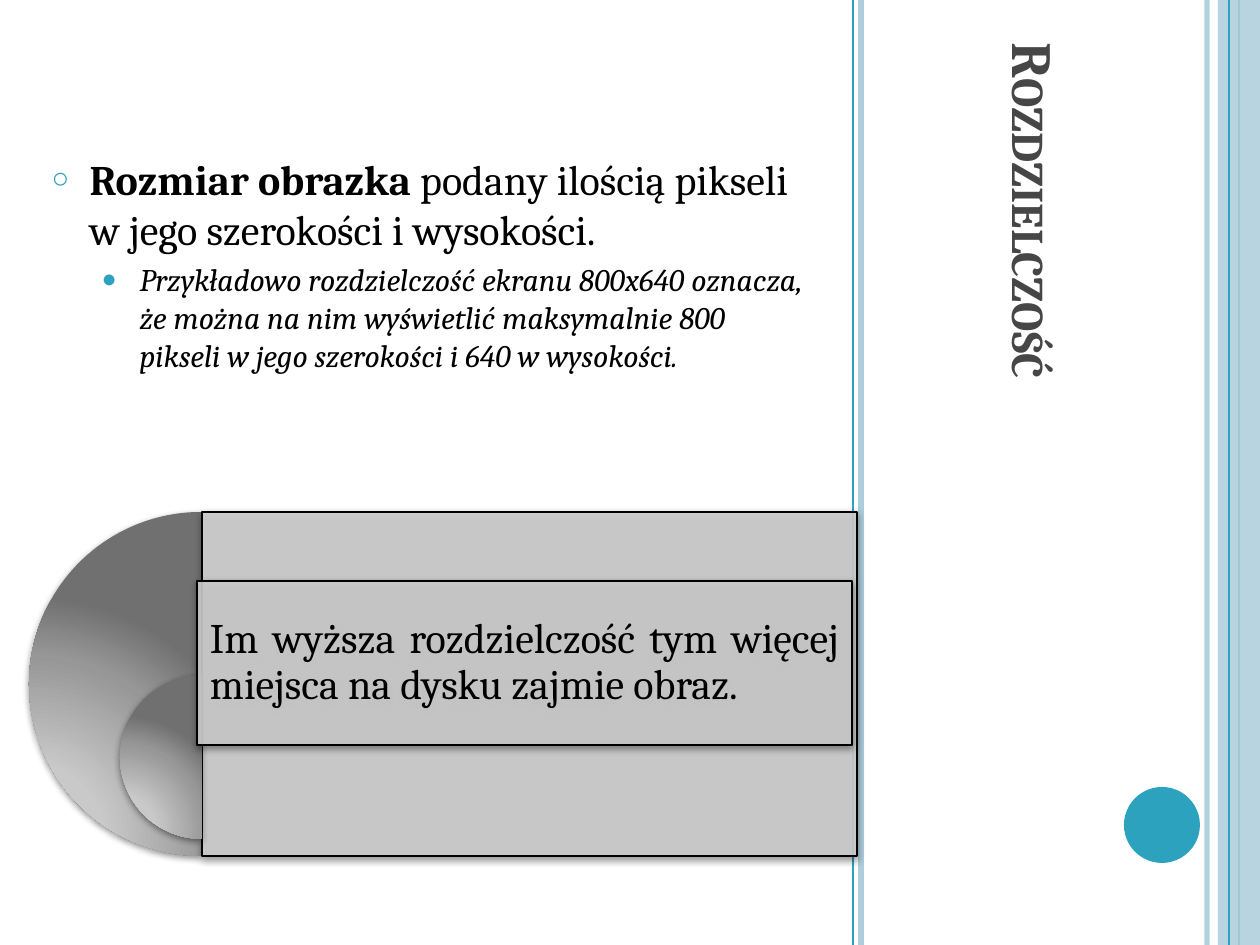
import pptx
import pptx.util
import pptx.dml.color
import pptx.enum.shapes
import pptx.enum.text
import pptx.oxml
import pptx.oxml.ns
from pptx.oxml.ns import qn

SCALE = 914400 // 126  # EMU per px
WIDTH, HEIGHT = 1260, 945
FONT = "Cambria"
ACCENT, PALE, GRAY, BLACK = "2DA2BF", "ADCEDC", "CCCCCC", "000000"

TITLE = "Rozdzielczość"
# level, bullet, bullet size %, left indent px, font size, runs (text, bold, italic)
BODY = [
    (0, "○", 70, 38, 24, [
        ("Rozmiar obrazka ", True, False),
        ("podany ilością pikseli w jego szerokości i wysokości.", False, False)]),
    (1, "●", 80, 88, 18, [
        ("Przykładowo rozdzielczość ekranu 800x640 oznacza, że można na nim "
         "wyświetlić maksymalnie 800 pikseli w jego szerokości i 640 w wysokości.",
         False, True)]),
]
NOTE = "Im wyższa rozdzielczość tym więcej miejsca na dysku zajmie obraz."

# x px, colour, width pt, opacity %
STRIPES = [(1207, PALE, 3, 93), (861, PALE, 3, 100), (853, ACCENT, 1, 100),
           (1239, ACCENT, 1.5, 100)]
INNER_STRIPE = (1229, ACCENT, 0.75, 100)
# half disc (left, top, diameter), panel (left, top, width, height), panel text
LAYERS = [((29, 512, 344), (202, 512, 655, 344), None),
          ((120, 675, 164), (197, 581, 655, 164), NOTE)]
GRADIENT = [(0, "D1D1D1"), (30, "C9C9C9"), (75, "979797"), (100, "707070")]


def px(value):
    return pptx.util.Emu(value * SCALE)


def color(text):
    return pptx.dml.color.RGBColor.from_string(text)


def add_xml(parent, xml):
    element = pptx.oxml.parse_xml(
        xml.replace(">", " " + pptx.oxml.ns.nsdecls("a") + ">", 1)
        if "/>" not in xml.split(">")[0] + ">"
        else xml.replace("/>", " " + pptx.oxml.ns.nsdecls("a") + "/>", 1))
    parent.append(element)
    return element


def set_opacity(element, percent):
    if percent < 100:
        add_xml(next(element.iter(qn("a:srgbClr"))), f'<a:alpha val="{percent * 1000}"/>')


def place(shape, left, top, width, height):
    shape.left, shape.top, shape.width, shape.height = map(px, (left, top, width, height))


def add_run(paragraph, text, size, tone, bold=False, italic=False):
    run = paragraph.add_run()
    run.text = text
    font = run.font
    font.name, font.size, font.bold, font.italic = FONT, pptx.util.Pt(size), bold, italic
    font.color.rgb = color(tone)
    return run


def add_stripe(shapes, x, tone, width, opacity):
    line = shapes.add_connector(pptx.enum.shapes.MSO_CONNECTOR.STRAIGHT,
                                px(x), 0, px(x), px(HEIGHT))
    line.line.color.rgb = color(tone)
    line.line.width = pptx.util.Pt(width)
    set_opacity(line.element.spPr, opacity)
    add_xml(line.element.spPr, "<a:effectLst/>")


def add_plain(shapes, kind, left, top, width, height, tone, opacity=100):
    shape = shapes.add_shape(kind, *map(px, (left, top, width, height)))
    shape.fill.solid()
    shape.fill.fore_color.rgb = color(tone)
    set_opacity(shape.element.spPr, opacity)
    shape.line.fill.background()
    shape.shadow.inherit = False
    return shape


def add_shadow(shape):
    effects = shape.element.spPr.find(qn("a:effectLst"))
    add_xml(effects, '<a:outerShdw blurRad="50800" dist="20320" dir="5400000" rotWithShape="0">'
                     f'<a:srgbClr val="{BLACK}"><a:alpha val="42000"/></a:srgbClr></a:outerShdw>')


def set_radial_gradient(shape):
    stops = "".join(f'<a:gs pos="{position * 1000}"><a:srgbClr val="{tone}"/></a:gs>'
                    for position, tone in GRADIENT)
    properties = shape.element.spPr
    solid = properties.find(qn("a:solidFill"))
    gradient = add_xml(properties, f'<a:gradFill rotWithShape="1"><a:gsLst>{stops}</a:gsLst>'
                       '<a:path path="circle"><a:fillToRect l="5000" t="100000" r="120000" '
                       'b="10000"/></a:path></a:gradFill>')
    properties.replace(solid, gradient)


presentation = pptx.Presentation()
presentation.slide_width, presentation.slide_height = px(WIDTH), px(HEIGHT)
slide = presentation.slides.add_slide(presentation.slide_layouts[1])
shapes = slide.shapes
title, body = shapes.title, slide.placeholders[1]
kinds = pptx.enum.shapes.MSO_SHAPE

# Side decoration
for stripe in STRIPES:
    add_stripe(shapes, *stripe)
add_plain(shapes, kinds.RECTANGLE, 1218, 0, 42, HEIGHT, PALE, 87)
add_stripe(shapes, *INNER_STRIPE)
add_plain(shapes, kinds.OVAL, 1124, 787, 76, 76, ACCENT)

# Placeholders go in front of the decoration
for placeholder in (title, body):
    placeholder.element.getparent().append(placeholder.element)
    placeholder.text_frame.auto_size = pptx.enum.text.MSO_AUTO_SIZE.NONE

# Vertical title
place(title, 593, 431, 870, 67)
title.rotation = 90
title.text_frame.vertical_anchor = pptx.enum.text.MSO_ANCHOR.BOTTOM
paragraph = title.text_frame.paragraphs[0]
paragraph.alignment = pptx.enum.text.PP_ALIGN.LEFT
run = add_run(paragraph, TITLE, 32.4, "464646", bold=True)
run.font.element.set("cap", "small") if hasattr(run.font, "element") else \
    next(paragraph.runs[0].text and title.element.iter(qn("a:rPr"))).set("cap", "small")

# Bulleted list
place(body, 39, 147, 777, 375)
for index, (level, bullet, bullet_size, indent, size, runs) in enumerate(BODY):
    frame = body.text_frame
    paragraph = frame.add_paragraph() if index else frame.paragraphs[0]
    paragraph.level = level
    paragraph.space_before = pptx.util.Pt(6 if level == 0 else 3.6)
    for text, bold, italic in runs:
        add_run(paragraph, text, size, BLACK, bold, italic)
    properties = next(paragraph.runs[0].text and body.element.iterfind(
        f".//{qn('a:p')}[{index + 1}]/{qn('a:pPr')}"))
    properties.set("marL", str(px(indent)))
    properties.set("indent", str(px(-38)))
    add_xml(properties, f'<a:buClr><a:srgbClr val="{ACCENT}"/></a:buClr>')
    add_xml(properties, f'<a:buSzPct val="{bullet_size * 1000}"/>')
    add_xml(properties, f'<a:buChar char="{bullet}"/>')

# Half discs with panels
group = shapes.add_group_shape()
for (left, top, diameter), panel_box, text in LAYERS:
    disc = add_plain(group.shapes, kinds.PIE, left, top, diameter, diameter, GRAY)
    disc.adjustments[0], disc.adjustments[1] = 54, 162  # 90 to 270 degrees
    set_radial_gradient(disc)
    add_shadow(disc)
    panel = add_plain(group.shapes, kinds.RECTANGLE, *panel_box, GRAY, 90)
    panel.line.color.rgb = color(BLACK)
    panel.line.width = pptx.util.Pt(1)
    add_shadow(panel)
    if text:
        frame = panel.text_frame
        frame.word_wrap = True
        frame.vertical_anchor = pptx.enum.text.MSO_ANCHOR.MIDDLE
        frame.margin_left = frame.margin_right = px(13)
        frame.margin_top = frame.margin_bottom = px(13)
        paragraph = frame.paragraphs[0]
        paragraph.alignment = pptx.enum.text.PP_ALIGN.JUSTIFY
        paragraph.line_spacing = 0.9
        add_run(paragraph, text, 24, BLACK)

presentation.save("out.pptx")
